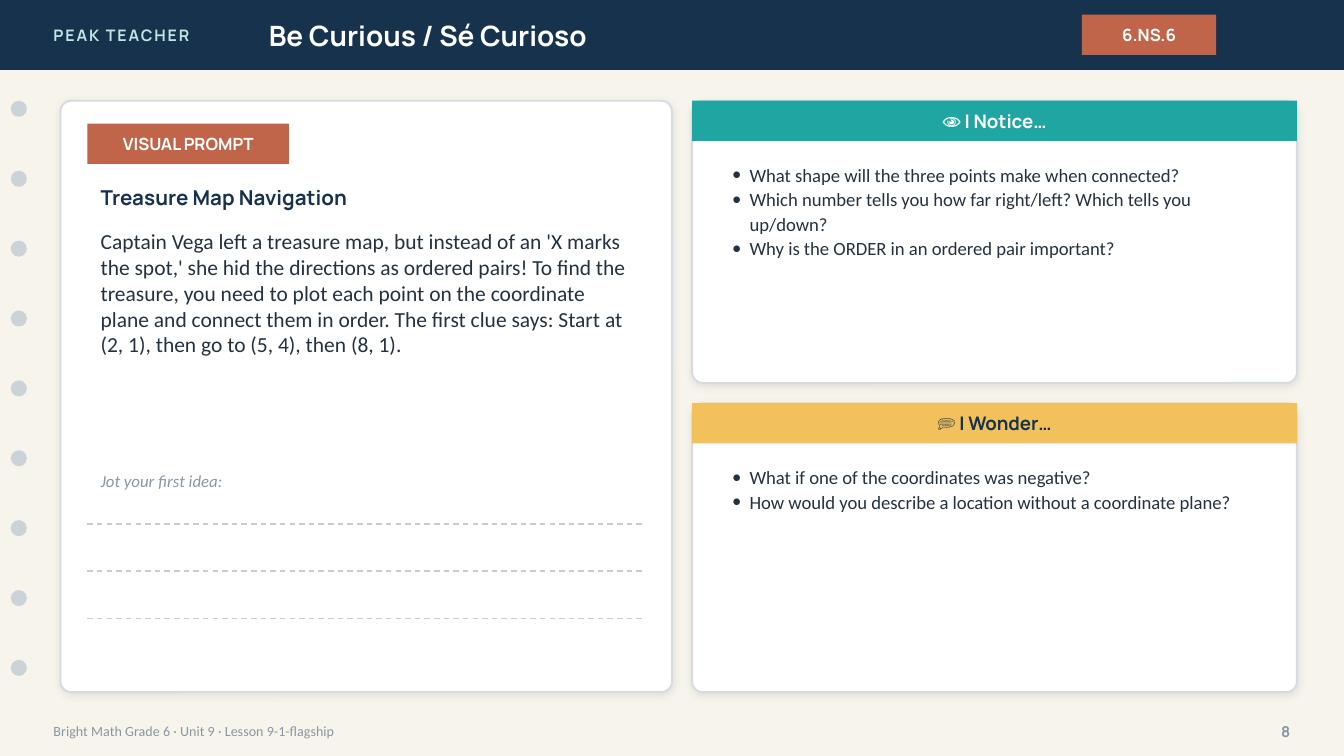
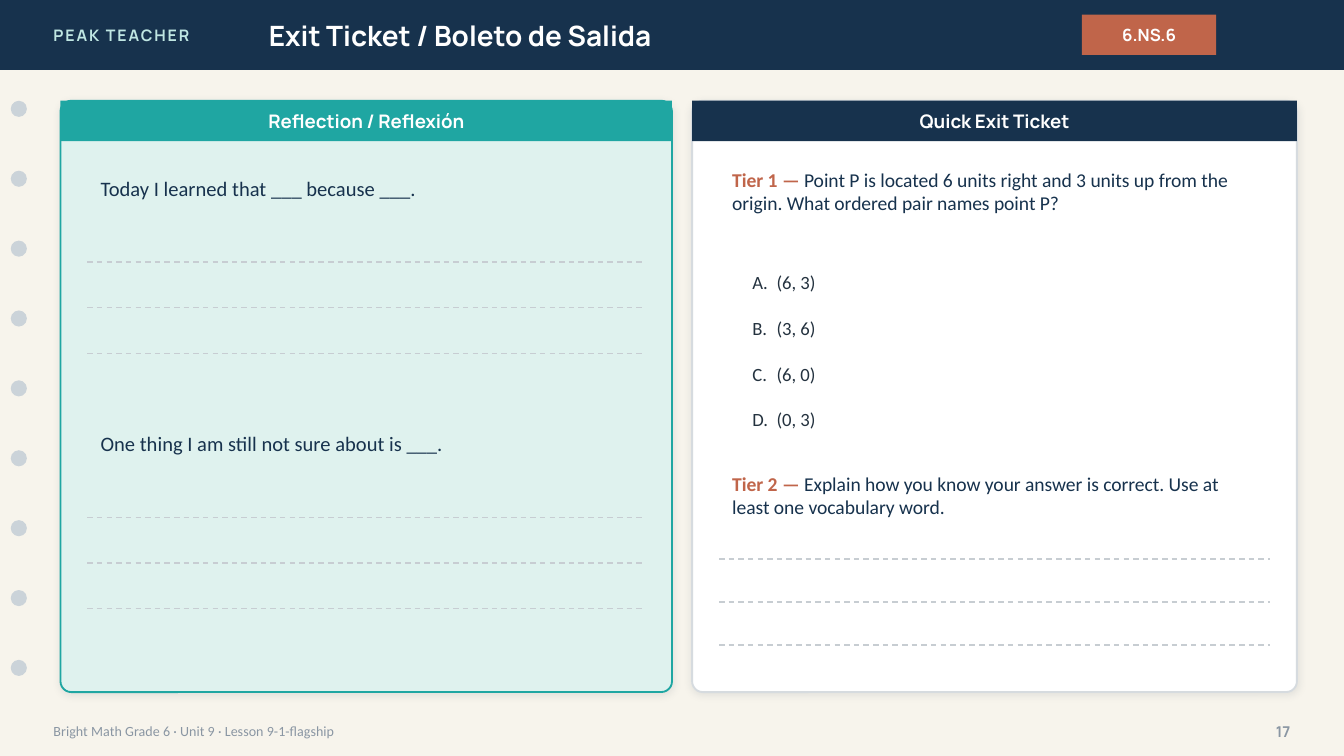
from dataclasses import dataclass

from lxml.etree import SubElement
from pptx import Presentation
from pptx.dml.color import RGBColor
from pptx.enum.dml import MSO_LINE
from pptx.enum.shapes import MSO_CONNECTOR, MSO_SHAPE
from pptx.enum.text import MSO_ANCHOR, MSO_AUTO_SIZE, PP_ALIGN
from pptx.oxml.ns import qn
from pptx.util import Inches, Pt


@dataclass(frozen=True)
class Theme:
    heading: str = "Manrope"
    body: str = "Calibri"
    paper: str = "F7F4EC"
    white: str = "FFFFFF"
    navy: str = "17324D"
    teal: str = "1FA6A2"
    mint: str = "DFF2EE"
    brand: str = "BFE6E2"
    clay: str = "C0654A"
    gold: str = "F2C15B"
    ink: str = "24323F"
    muted: str = "8A96A3"
    hole: str = "CBD3D9"
    rule: str = "C7CDD2"
    border: str = "D6DBDF"
    shadow: str = "1C2E42"
    title_size: float = 15
    prompt_size: float = 11.5
    sentence_size: float = 11
    tier_size: float = 10.5
    text_size: float = 10
    label_size: float = 9
    brand_size: float = 8.5
    number_size: float = 8
    footer_size: float = 7.5


THEME = Theme()
CARD_TOP = 0.75
LEFT_X, LEFT_WIDTH = 0.45, 4.55
RIGHT_X, RIGHT_WIDTH = 5.15, 4.5
FULL_HEIGHT = 4.4
BAR_HEIGHT = 0.3
RADIUS = 0.08
PAD = 0.2
LEFT_TEXT = LEFT_X + PAD
RIGHT_TEXT = RIGHT_X + PAD
LEFT_TEXT_WIDTH = 4.15
RIGHT_TEXT_WIDTH = 4.1


def color(value):
    return RGBColor.from_string(value)


def inches(*lengths):
    return [Inches(length) for length in lengths]


def style(para, size, hue, font=THEME.body, bold=False, italic=False):
    para.font.name = font
    para.font.size = Pt(size)
    para.font.color.rgb = color(hue)
    para.font.bold = bold
    para.font.italic = italic


def add_text(page, area, text, size, hue, font=THEME.body, bold=False,
             italic=False, align=PP_ALIGN.LEFT, anchor=MSO_ANCHOR.MIDDLE, tab=None):
    box = page.shapes.add_textbox(*inches(*area))
    frame = box.text_frame
    frame.word_wrap = True
    frame.vertical_anchor = anchor
    para = frame.paragraphs[0]
    para.text = text
    para.alignment = align
    if tab:
        stops = SubElement(para._p.get_or_add_pPr(), qn("a:tabLst"))
        SubElement(stops, qn("a:tab"), pos=str(Inches(tab)), algn="l")
    style(para, size, hue, font, bold, italic)
    return para


def add_block(page, area, fill, shape=MSO_SHAPE.RECTANGLE):
    block = page.shapes.add_shape(shape, *inches(*area))
    block.shadow.inherit = False
    block.fill.solid()
    block.fill.fore_color.rgb = color(fill)
    block.line.fill.background()
    return block


def add_label(page, area, text, fill, size=THEME.label_size, hue=THEME.white):
    label = add_block(page, area, fill)
    frame = label.text_frame
    frame.vertical_anchor = MSO_ANCHOR.MIDDLE
    para = frame.paragraphs[0]
    para.text = text
    para.alignment = PP_ALIGN.CENTER
    style(para, size, hue, THEME.heading, bold=True)


def add_card(page, area, fill=THEME.white, border=THEME.border):
    card = add_block(page, area, fill, MSO_SHAPE.ROUNDED_RECTANGLE)
    card.adjustments[0] = RADIUS / min(area[2:])
    card.line.color.rgb = color(border)
    card.line.width = Pt(1)
    effects = card._element.spPr.find(qn("a:effectLst"))
    shadow = SubElement(effects, qn("a:outerShdw"), blurRad=str(Pt(4)),
                        dist=str(Pt(1)), dir="5400000", algn="bl", rotWithShape="0")
    tint = SubElement(shadow, qn("a:srgbClr"), val=THEME.shadow)
    SubElement(tint, qn("a:alpha"), val="10000")


def add_headed_card(page, area, heading, bar, hue=THEME.white,
                    fill=THEME.white, border=THEME.border):
    left, top, width, _ = area
    add_card(page, area, fill, border)
    add_label(page, (left, top, width, BAR_HEIGHT), heading, bar, THEME.text_size, hue)


def add_writing_lines(page, left, top, width, gap, count=3):
    for index in range(count):
        y = top + index * gap
        line = page.shapes.add_connector(
            MSO_CONNECTOR.STRAIGHT, *inches(left, y, left + width, y))
        line.line.color.rgb = color(THEME.rule)
        line.line.width = Pt(0.75)
        line.line.dash_style = MSO_LINE.DASH
        SubElement(line._element.spPr, qn("a:effectLst"))


def add_bullets(page, area, items):
    box = page.shapes.add_textbox(*inches(*area))
    frame = box.text_frame
    frame.word_wrap = True
    for index, item in enumerate(items):
        para = frame.add_paragraph() if index else frame.paragraphs[0]
        para.text = item
        para.line_spacing = 1.1
        props = para._p.get_or_add_pPr()
        props.set("marL", str(Inches(0.13)))
        props.set("indent", str(-Inches(0.13)))
        SubElement(props, qn("a:buFont"), typeface=THEME.body)
        SubElement(props, qn("a:buChar"), char="•")
        style(para, THEME.text_size, THEME.ink)


def add_tier(page, top, height, name, question):
    para = add_text(page, (RIGHT_TEXT, top, RIGHT_TEXT_WIDTH, height), "",
                    THEME.tier_size, THEME.navy, anchor=MSO_ANCHOR.TOP)
    lead = para.add_run()
    lead.text = f"{name} — "
    lead.font.bold = True
    lead.font.color.rgb = color(THEME.clay)
    para.add_run().text = question


def add_title(page, text):
    title = page.shapes.title
    title.left, title.top, title.width, title.height = inches(1.9, 0, 5.6, 0.52)
    title._element.getparent().append(title._element)
    frame = title.text_frame
    frame.text = text
    frame.word_wrap = True
    frame.auto_size = MSO_AUTO_SIZE.NONE
    frame.vertical_anchor = MSO_ANCHOR.MIDDLE
    para = frame.paragraphs[0]
    para.alignment = PP_ALIGN.LEFT
    style(para, THEME.title_size, THEME.white, THEME.heading, bold=True)


def add_page(deck, title, number):
    page = deck.slides.add_slide(deck.slide_layouts[5])
    page.background.fill.solid()
    page.background.fill.fore_color.rgb = color(THEME.paper)
    add_block(page, (0, 0, 10, 0.52), THEME.navy)
    brand = add_text(page, (0.3, 0, 2.4, 0.52), "PEAK TEACHER", THEME.brand_size,
                     THEME.brand, THEME.heading, bold=True)
    brand._p.get_or_add_pPr().get_or_add_defRPr().set("spc", "100")
    add_title(page, title)
    add_label(page, (8.05, 0.11, 1, 0.3), "6.NS.6", THEME.clay)
    for index in range(9):
        add_block(page, (0.08, CARD_TOP + index * 0.52, 0.12, 0.12),
                  THEME.hole, MSO_SHAPE.OVAL)
    add_text(page, (0.3, 5.3, 7, 0.28),
             "Bright Math Grade 6 · Unit 9 · Lesson 9-1-flagship",
             THEME.footer_size, THEME.muted)
    add_text(page, (9.2, 5.3, 0.5, 0.28), str(number), THEME.number_size,
             THEME.muted, THEME.heading, bold=True, align=PP_ALIGN.RIGHT)
    return page


def build_curious(deck):
    page = add_page(deck, "Be Curious / Sé Curioso", 8)
    add_card(page, (LEFT_X, CARD_TOP, LEFT_WIDTH, FULL_HEIGHT))
    add_label(page, (LEFT_TEXT, 0.92, 1.5, 0.3), "VISUAL PROMPT", THEME.clay)
    add_text(page, (LEFT_TEXT, 1.32, LEFT_TEXT_WIDTH, 0.3), "Treasure Map Navigation",
             THEME.sentence_size, THEME.navy, THEME.heading, bold=True)
    add_text(page, (LEFT_TEXT, 1.65, LEFT_TEXT_WIDTH, 1.7),
             "Captain Vega left a treasure map, but instead of an 'X marks the spot,' "
             "she hid the directions as ordered pairs! To find the treasure, you need "
             "to plot each point on the coordinate plane and connect them in order. "
             "The first clue says: Start at (2, 1), then go to (5, 4), then (8, 1).",
             THEME.prompt_size, THEME.ink, anchor=MSO_ANCHOR.TOP)
    add_text(page, (LEFT_TEXT, 3.45, 4, 0.25), "Jot your first idea:",
             THEME.label_size, THEME.muted, italic=True)
    add_writing_lines(page, LEFT_TEXT, 3.9, LEFT_TEXT_WIDTH, 0.35)

    cards = [
        (CARD_TOP, 2.1, "👁 I Notice…", THEME.teal, THEME.white,
         ["What shape will the three points make when connected?",
          "Which number tells you how far right/left? Which tells you up/down?",
          "Why is the ORDER in an ordered pair important?"]),
        (3, 2.15, "💭 I Wonder…", THEME.gold, THEME.navy,
         ["What if one of the coordinates was negative?",
          "How would you describe a location without a coordinate plane?"]),
    ]
    for top, height, heading, bar, hue, items in cards:
        add_headed_card(page, (RIGHT_X, top, RIGHT_WIDTH, height), heading, bar, hue)
        add_bullets(page, (RIGHT_TEXT, top + 0.4, RIGHT_TEXT_WIDTH, height - 0.5), items)


def build_exit_ticket(deck):
    page = add_page(deck, "Exit Ticket / Boleto de Salida", 17)
    add_headed_card(page, (LEFT_X, CARD_TOP, LEFT_WIDTH, FULL_HEIGHT),
                    "Reflection / Reflexión", THEME.teal,
                    fill=THEME.mint, border=THEME.teal)
    sentences = ["Today I learned that ___ because ___.",
                 "One thing I am still not sure about is ___."]
    for index, sentence in enumerate(sentences):
        top = 1.2 + index * 1.9
        add_text(page, (LEFT_TEXT, top, LEFT_TEXT_WIDTH, 0.4), sentence,
                 THEME.sentence_size, THEME.navy)
        add_writing_lines(page, LEFT_TEXT, top + 0.75, LEFT_TEXT_WIDTH, 0.34)

    add_headed_card(page, (RIGHT_X, CARD_TOP, RIGHT_WIDTH, FULL_HEIGHT),
                    "Quick Exit Ticket", THEME.navy)
    add_tier(page, 1.2, 0.7, "Tier 1",
             "Point P is located 6 units right and 3 units up from the origin. "
             "What ordered pair names point P?")
    for index, pair in enumerate(["(6, 3)", "(3, 6)", "(6, 0)", "(0, 3)"]):
        add_text(page, (5.5, 1.95 + index * 0.34, 3.9, 0.3), f"{'ABCD'[index]}.\t{pair}",
                 THEME.text_size, THEME.ink, tab=0.18)
    add_tier(page, 3.46, 0.55, "Tier 2",
             "Explain how you know your answer is correct. "
             "Use at least one vocabulary word.")
    add_writing_lines(page, RIGHT_TEXT, 4.16, RIGHT_TEXT_WIDTH, 0.32)


def main():
    deck = Presentation()
    deck.slide_width = Inches(10)
    deck.slide_height = Inches(10 * 9 / 16)
    build_curious(deck)
    build_exit_ticket(deck)
    deck.save("out.pptx")


if __name__ == "__main__":
    main()
